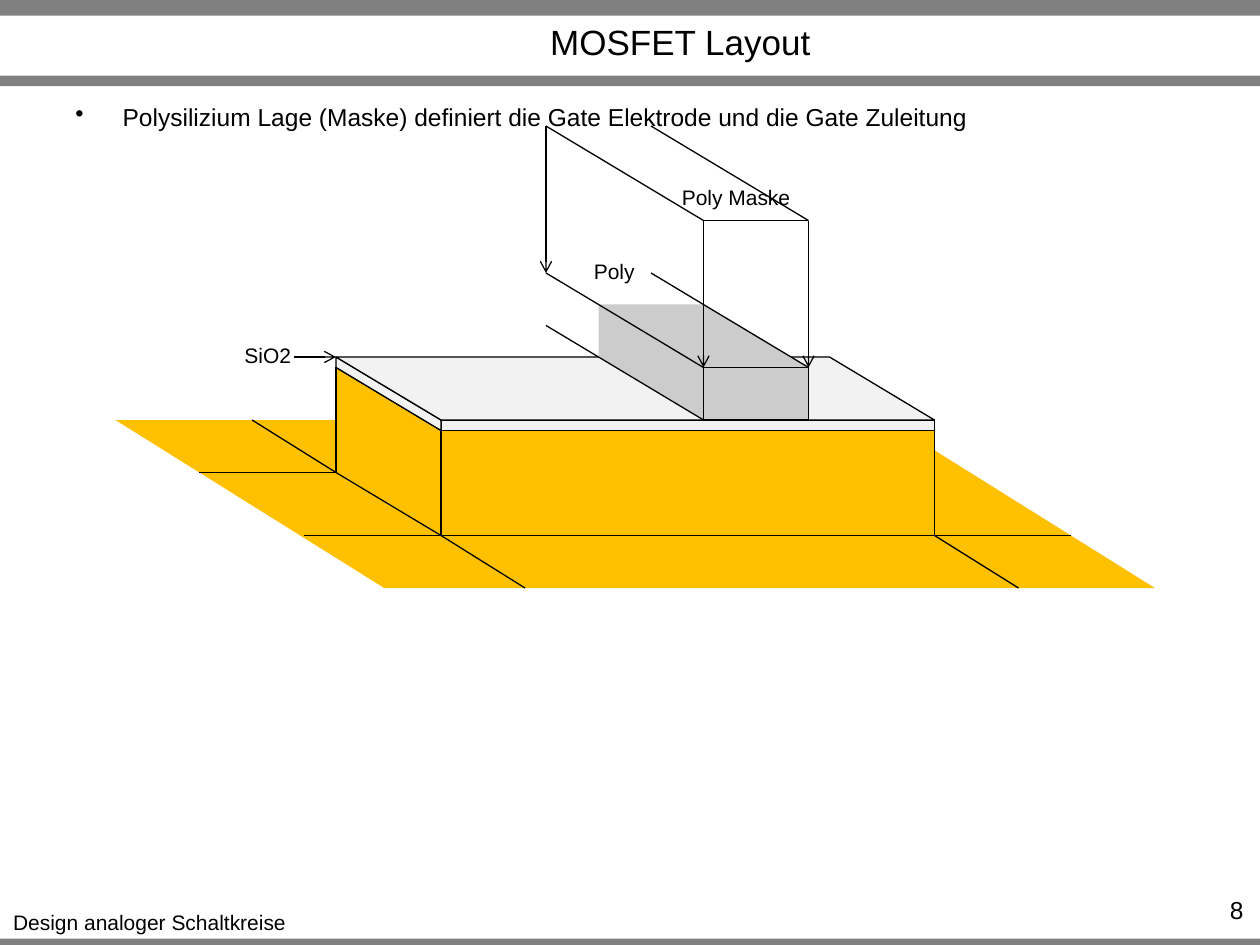
from dataclasses import dataclass

from lxml import etree
from pptx import Presentation
from pptx.dml.color import RGBColor
from pptx.enum import shapes, text
from pptx.oxml.ns import qn
from pptx.util import Inches, Pt

# The slide is a grid of 120 columns by 90 rows of square cells
COLUMNS, ROWS = 120, 90
CELL = Inches(10) / COLUMNS
COLORS = {"ink": "000000", "bar": "808080", "silicon": "FFC000",
          "oxide": "F2F2F2", "poly": "CCCCCC"}
FONT = "Arial"
SKEW = 10 / 6  # columns per row along the receding edges


@dataclass
class Box:
    left: float
    top: float
    width: float
    height: float

    def point(self, column, row):
        return round((self.left + column) * CELL), round((self.top + row) * CELL)

    def inner(self, column, row, width, height):
        return Box(self.left + column, self.top + row, width, height)

    def emu(self):
        return (*self.point(0, 0), round(self.width * CELL), round(self.height * CELL))


def color(name):
    return RGBColor.from_string(COLORS[name])


def paint(shape, fill, outline):
    shape.shadow.inherit = False
    shape.fill.solid()
    shape.fill.fore_color.rgb = color(fill)
    if outline:
        shape.line.color.rgb = color("ink")
        shape.line.width = Pt(0.75)
    else:
        shape.line.fill.background()


def add_rectangle(slide, box, fill, outline=False):
    shape = slide.shapes.add_shape(shapes.MSO_SHAPE.RECTANGLE, *box.emu())
    paint(shape, fill, outline)


def add_slanted(slide, box, fill, outline=False, skew=SKEW, upright=False):
    shape = slide.shapes.add_shape(shapes.MSO_SHAPE.PARALLELOGRAM, *box.emu())
    if upright:
        shape.rotation = 90
        shape.adjustments[0] = 6 / box.width
    else:
        shape._element.spPr.find(qn("a:xfrm")).set("flipH", "1")
        shape.adjustments[0] = skew
    paint(shape, fill, outline)


def add_polygon(slide, box, points, fill):
    first, *rest = [box.point(*point) for point in points]
    builder = slide.shapes.build_freeform(*first, scale=1.0)
    builder.add_line_segments(rest, close=True)
    paint(builder.convert_to_shape(), fill, False)


def add_line(slide, box, start, end, arrow=False):
    line = slide.shapes.add_connector(
        shapes.MSO_CONNECTOR.STRAIGHT, *box.point(*start), *box.point(*end))
    line.line.color.rgb = color("ink")
    line.line.width = Pt(0.75)
    if arrow:
        outline = line._element.spPr.find(qn("a:ln"))
        etree.SubElement(outline, qn("a:tailEnd"), type="arrow")
    etree.SubElement(line._element.spPr, qn("a:effectLst"))


def add_text(slide, box, words, size=12, align=text.PP_ALIGN.CENTER,
             wrap=False, middle=False, bullet=False):
    shape = slide.shapes.add_textbox(*box.emu())
    frame = shape.text_frame
    frame.word_wrap = wrap
    if middle:
        frame.vertical_anchor = text.MSO_ANCHOR.MIDDLE
    paragraph = frame.paragraphs[0]
    paragraph.alignment = align
    if bullet:
        properties = paragraph._p.get_or_add_pPr()
        indent = Inches(0.375)
        properties.set("marL", str(indent))
        properties.set("indent", str(-indent))
        etree.SubElement(properties, qn("a:buChar"), char="•")
    run = paragraph.add_run()
    run.text = words
    run.font.size = Pt(size)
    run.font.name = FONT
    run.font.color.rgb = color("ink")


def add_frame(slide, box):
    # Grey bars as (row, height), then the texts around the drawing
    for row, height in ((89.4, 0.6), (0, 1.5), (7.2, 1)):
        add_rectangle(slide, box.inner(0, row, box.width, height), "bar")
    add_text(slide, box.inner(0, 86, 28.5, 3.6), "Design analoger Schaltkreise")
    add_text(slide, box.inner(15.6, 1.7, 98.4, 4.5), "MOSFET Layout",
             size=20, wrap=True, middle=True)
    add_text(slide, box.inner(6, 9.1, 108, 5.9),
             "Polysilizium Lage (Maske) definiert die Gate Elektrode und die Gate Zuleitung",
             size=14, align=text.PP_ALIGN.LEFT, wrap=True, bullet=True)
    add_text(slide, box.inner(109.2, 84.7, 10.4, 2.9), "8",
             size=14, align=text.PP_ALIGN.RIGHT, wrap=True)


def add_substrate(slide, box):
    # Raised block and the surrounding plane
    add_slanted(slide, box.inner(21, 0, 57, 6), "silicon", skew=1.6)
    add_polygon(slide, box, [(21, 0), (31, 6), (31, 11), (21, 5)], "silicon")
    add_slanted(slide, box.inner(0, 5, box.width, 16), "silicon", skew=1.6)
    add_rectangle(slide, box.inner(66, 6, 12, 5), "silicon")
    edges = [
        # Block
        ((21, 0), (21, 10)), ((31, 6), (31, 16)), ((78, 6), (78, 16)),
        ((21, 0), (68, 0)), ((31, 6), (78, 6)), ((31, 16), (78, 16)),
        ((21, 0), (31, 6)), ((78, 6), (68, 0)), ((21, 10), (31, 16)),
        ((41, 6), (31, 6)),
        # Extensions on the plane
        ((13, 5), (21, 10)), ((31, 16), (39, 21)), ((78, 16), (86, 21)),
        ((31, 16), (18, 16)), ((21, 10), (8, 10)), ((91, 16), (78, 16)),
    ]
    for start, end in edges:
        add_line(slide, box, start, end)


def add_oxide(slide, box):
    add_text(slide, box.inner(-10, -2, 7, 3.6), "SiO2")
    add_line(slide, box, (-4, 0), (0, 0), arrow=True)
    add_rectangle(slide, box.inner(10, 6, 47, 1), "oxide", outline=True)
    add_slanted(slide, box.inner(1.5, -1.5, 7, 10), "oxide", outline=True, upright=True)
    add_slanted(slide, box.inner(0, 0, box.width, 6), "oxide", outline=True)


def add_strip_edges(slide, box):
    # Two receding edges, each with its extension to the back
    for column in (0, 10):
        add_line(slide, box, (column + 5, 3), (column, 0))
        add_line(slide, box, (column + 15, 9), (column + 5, 3))


def add_gate(slide, box):
    add_polygon(slide, box, [(5, 3), (15, 9), (15, 14), (5, 8)], "poly")
    add_slanted(slide, box.inner(5, 3, 20, 6), "poly")
    add_rectangle(slide, box.inner(15, 9, 10, 5), "poly", outline=True)
    add_line(slide, box, (15, 14), (5, 8))
    add_line(slide, box, (5, 8), (0, 5))
    add_strip_edges(slide, box)
    add_text(slide, box.inner(3.3, -2, 6.4, 3.6), "Poly")


def add_mask(slide, box):
    add_strip_edges(slide, box)
    add_line(slide, box, (15, 9), (25, 9))
    add_text(slide, box.inner(11.7, 5, 12.8, 3.6), "Poly Maske")
    # Projection of the mask onto the gate
    for column, row in ((25, 9), (15, 9), (0, 0)):
        add_line(slide, box, (column, row), (column, row + 14), arrow=True)


def main():
    presentation = Presentation()
    presentation.slide_width = round(COLUMNS * CELL)
    presentation.slide_height = round(ROWS * CELL)
    slide = presentation.slides.add_slide(presentation.slide_layouts[6])
    add_frame(slide, Box(0, 0, COLUMNS, ROWS))
    add_substrate(slide, Box(11, 35, 99, 21))
    add_oxide(slide, Box(32, 34, 57, 7))
    add_gate(slide, Box(52, 26, 25, 14))
    add_mask(slide, Box(52, 12, 25, 23))
    presentation.save("out.pptx")


if __name__ == "__main__":
    main()
